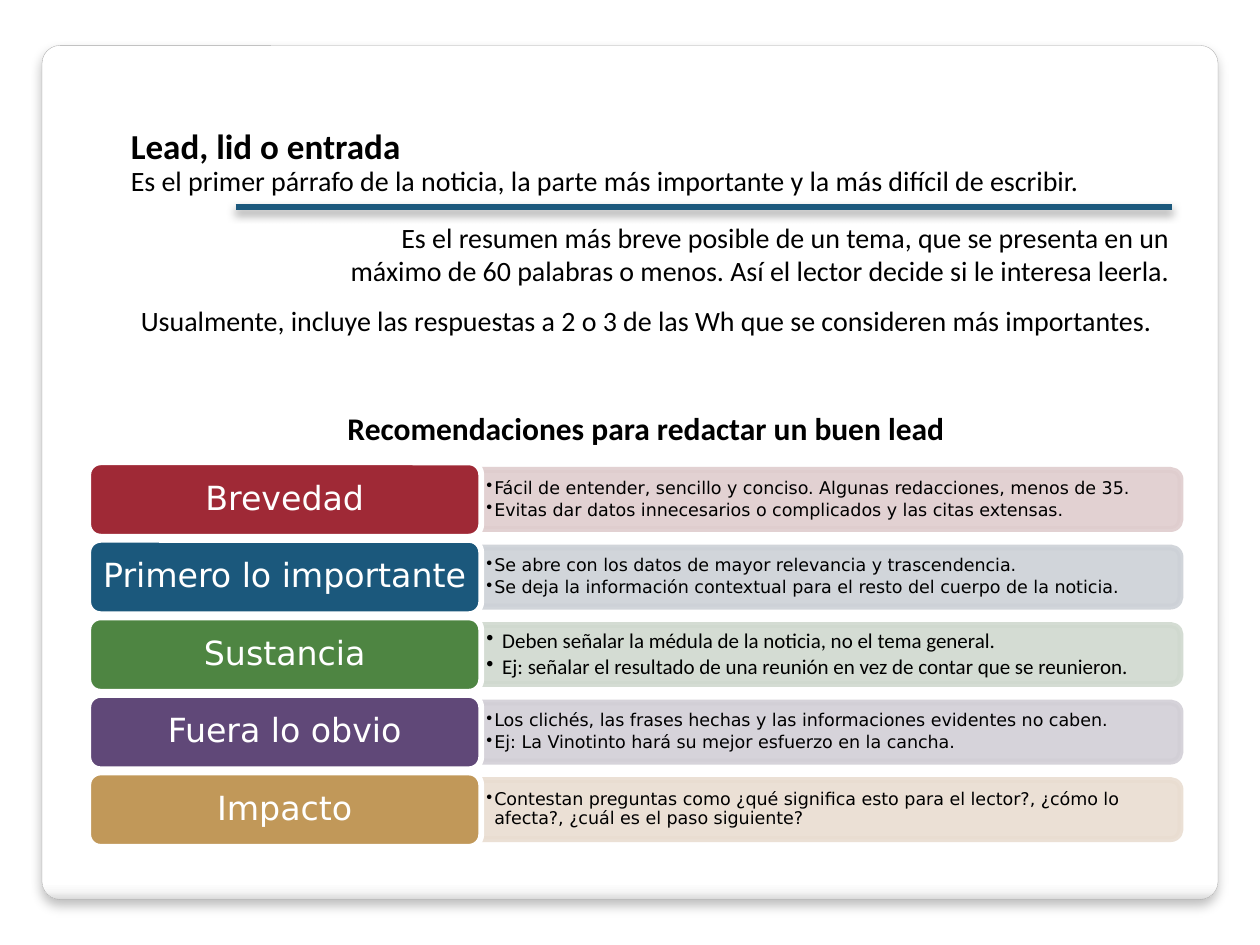
import pptx
import pptx.util
import pptx.dml.color
import pptx.enum.shapes
import pptx.enum.text
import pptx.oxml
import pptx.oxml.ns

Pt = pptx.util.Pt
RGB = pptx.dml.color.RGBColor.from_string
SHAPE = pptx.enum.shapes.MSO_SHAPE
ALIGN = pptx.enum.text.PP_ALIGN
ANCHOR = pptx.enum.text.MSO_ANCHOR
NS = pptx.oxml.ns.nsdecls("a")

THEME = {
    "body": "Calibri", "diagram": "DejaVu Sans",
    "text": "000000", "white": "FFFFFF", "rule": "1B587C", "edge": "A4A4A4",
    "title": 20, "heading": 18, "paragraph": 16, "label": 19, "border": 3.35,
    "card": [(0, "FFFFFF"), (98, "FFFFFF"), (99, "F7F7F7"), (100, "DADADA")],
}

TEXTS = [
    ("Lead, lid o entrada", (67.7, 67.7, 196.6, 31.5), "title", True, ALIGN.LEFT),
    ("Es el resumen más breve posible de un tema, que se presenta en un máximo de 60 palabras "
     "o menos. Así el lector decide si le interesa leerla.",
     (185.8, 122.4, 489.6, 46), "paragraph", False, ALIGN.RIGHT),
    ("Es el primer párrafo de la noticia, la parte más importante y la más difícil de escribir.",
     (67.7, 90, 573.8, 26.6), "paragraph", False, ALIGN.LEFT),
    ("Usualmente, incluye las respuestas a 2 o 3 de las Wh que se consideren más importantes.",
     (73.4, 170, 630, 26.6), "paragraph", False, ALIGN.LEFT),
    ("Recomendaciones para redactar un buen lead",
     (191.5, 230.4, 376.6, 28.8), "heading", True, ALIGN.LEFT),
]

SMALL = ("diagram", 10, 4.5)
LARGE = ("body", 12, 9)
ROWS = [
    ("Brevedad", "9F2936", "DFCDCE", SMALL, [
        "Fácil de entender, sencillo y conciso. Algunas redacciones, menos de 35.",
        "Evitas dar datos innecesarios o complicados y las citas extensas."]),
    ("Primero lo importante", "1B587C", "CDD1D7", SMALL, [
        "Se abre con los datos de mayor relevancia y trascendencia.",
        "Se deja la información contextual para el resto del cuerpo de la noticia."]),
    ("Sustancia", "4E8542", "D0D9CF", LARGE, [
        "Deben señalar la médula de la noticia, no el tema general.",
        "Ej: señalar el resultado de una reunión en vez de contar que se reunieron."]),
    ("Fuera lo obvio", "604878", "D2CFD6", SMALL, [
        "Los clichés, las frases hechas y las informaciones evidentes no caben.",
        "Ej: La Vinotinto hará su mejor esfuerzo en la cancha."]),
    ("Impacto", "C19859", "E9DDD1", SMALL, [
        "Contestan preguntas como ¿qué significa esto para el lector?, ¿cómo lo afecta?, "
        "¿cuál es el paso siguiente?"]),
]
ROW_TOP, ROW_PITCH = 264.2, 44.3
LABEL_LEFT, LABEL_W, LABEL_H = 50.4, 224.6, 42.5
BAND_W, BAND_H, NOTE_W, NOTE_H = 399.6, 33.8, 398.2, 30.2


def add_shape(s, kind, box, fill, line, width):
    sp = s.shapes.add_shape(kind, *map(Pt, box))
    sp.shadow.inherit = False
    sp.fill.solid()
    sp.fill.fore_color.rgb = RGB(fill)
    sp.line.color.rgb = RGB(line)
    sp.line.width = Pt(width)
    return sp


def add_text(s, box):
    tf = s.shapes.add_textbox(*map(Pt, box)).text_frame
    tf.word_wrap = True
    return tf


def set_margins(tf, x, y):
    tf.margin_left = tf.margin_right = Pt(x)
    tf.margin_top = tf.margin_bottom = Pt(y)
    tf.vertical_anchor = ANCHOR.MIDDLE


def set_font(p, font, size, color, bold=False):
    for r in p.runs:
        r.font.name = THEME[font]
        r.font.size = Pt(size)
        r.font.bold = bold
        r.font.color.rgb = RGB(THEME[color])


def set_shadow(sp, alpha, blur, dist):
    props = sp._element.spPr
    for old in props.findall(pptx.oxml.ns.qn("a:effectLst")):
        props.remove(old)
    props.append(pptx.oxml.parse_xml(
        f'<a:effectLst {NS}><a:outerShdw blurRad="{Pt(blur)}" dist="{Pt(dist)}" dir="5400000" '
        f'rotWithShape="0"><a:srgbClr val="000000"><a:alpha val="{alpha * 1000}"/></a:srgbClr>'
        '</a:outerShdw></a:effectLst>'))


def set_gradient(sp, stops):
    props = sp._element.spPr
    marks = "".join(f'<a:gs pos="{pos * 1000}"><a:srgbClr val="{c}"/></a:gs>' for pos, c in stops)
    solid = props.find(pptx.oxml.ns.qn("a:solidFill"))
    props.replace(solid, pptx.oxml.parse_xml(
        f'<a:gradFill {NS} rotWithShape="1"><a:gsLst>{marks}</a:gsLst>'
        '<a:lin ang="5400000" scaled="0"/></a:gradFill>'))


def set_alpha(sp, percent):
    for color in sp._element.spPr.iter(pptx.oxml.ns.qn("a:srgbClr")):
        color.append(pptx.oxml.parse_xml(f'<a:alpha {NS} val="{percent * 1000}"/>'))


def add_card(s):
    card = add_shape(s, SHAPE.ROUNDED_RECTANGLE, (24, 26, 672, 488),
                     THEME["white"], THEME["edge"], 0.16)
    card.adjustments[0] = 0.021
    set_gradient(card, THEME["card"])
    set_shadow(card, 25, 6, 4)


def add_row(s, index, label, color, tint, note_style, notes):
    top = ROW_TOP + index * ROW_PITCH
    middle = top + LABEL_H / 2
    left = LABEL_LEFT + LABEL_W
    band = add_shape(s, SHAPE.ROUND_2_SAME_RECTANGLE,
                     (left + (BAND_W - BAND_H) / 2, middle - BAND_W / 2, BAND_H, BAND_W),
                     tint, tint, THEME["border"])
    band.rotation = 90
    set_alpha(band, 90)

    tf = add_text(s, (left, middle - NOTE_H / 2, NOTE_W, NOTE_H))
    set_margins(tf, 3, 1.5)
    tf.text = "\n".join(notes)
    font, size, indent = note_style
    for p in tf.paragraphs:
        props = p._p.get_or_add_pPr()
        props.set("marL", str(Pt(indent)))
        props.set("indent", str(-Pt(indent)))
        props.append(pptx.oxml.parse_xml(f'<a:buChar {NS} char="•"/>'))
        p.line_spacing = 0.9
        p.space_after = Pt(1.8)
        set_font(p, font, size, "text")

    tag = add_shape(s, SHAPE.ROUNDED_RECTANGLE, (LABEL_LEFT, top, LABEL_W, LABEL_H),
                    color, THEME["white"], THEME["border"])
    tf = tag.text_frame
    set_margins(tf, 5, 5)
    tf.text = label
    p = tf.paragraphs[0]
    p.alignment = ALIGN.CENTER
    p.line_spacing = 0.9
    set_font(p, "diagram", THEME["label"], "white")


def main():
    prs = pptx.Presentation()
    prs.slide_width, prs.slide_height = Pt(720), Pt(540)
    s = prs.slides.add_slide(prs.slide_layouts[6])
    add_card(s)
    for text, box, size, bold, align in TEXTS:
        tf = add_text(s, box)
        tf.text = text
        p = tf.paragraphs[0]
        p.alignment = align
        set_font(p, "body", THEME[size], "text", bold)
    for index, row in enumerate(ROWS):
        add_row(s, index, *row)
    rule = s.shapes.add_connector(pptx.enum.shapes.MSO_CONNECTOR.STRAIGHT,
                                  Pt(134.6), Pt(118.1), Pt(669.6), Pt(118.1))
    rule.line.color.rgb = RGB(THEME["rule"])
    rule.line.width = Pt(THEME["border"])
    set_shadow(rule, 40, 5.2, 3)
    prs.save("out.pptx")


if __name__ == "__main__":
    main()
